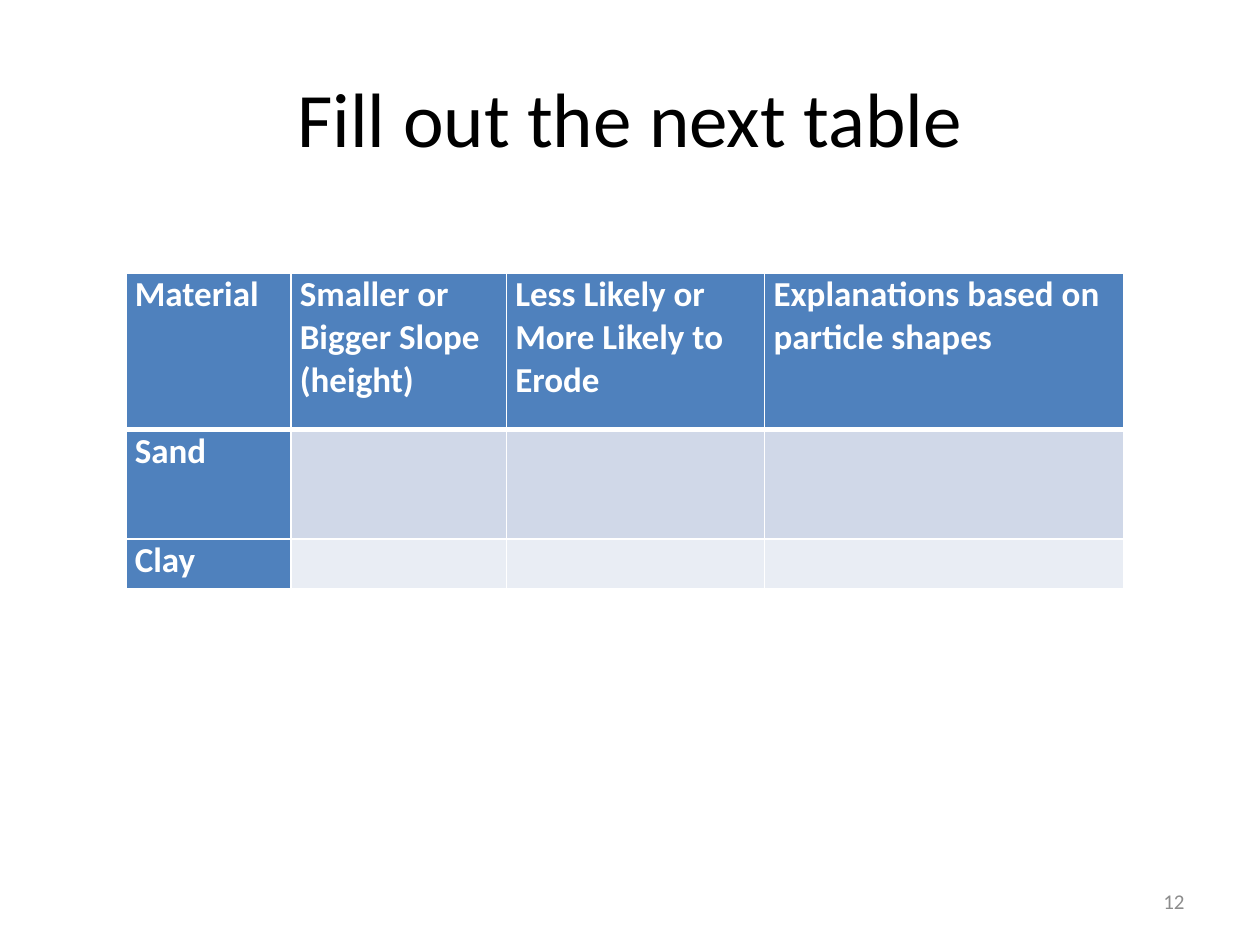
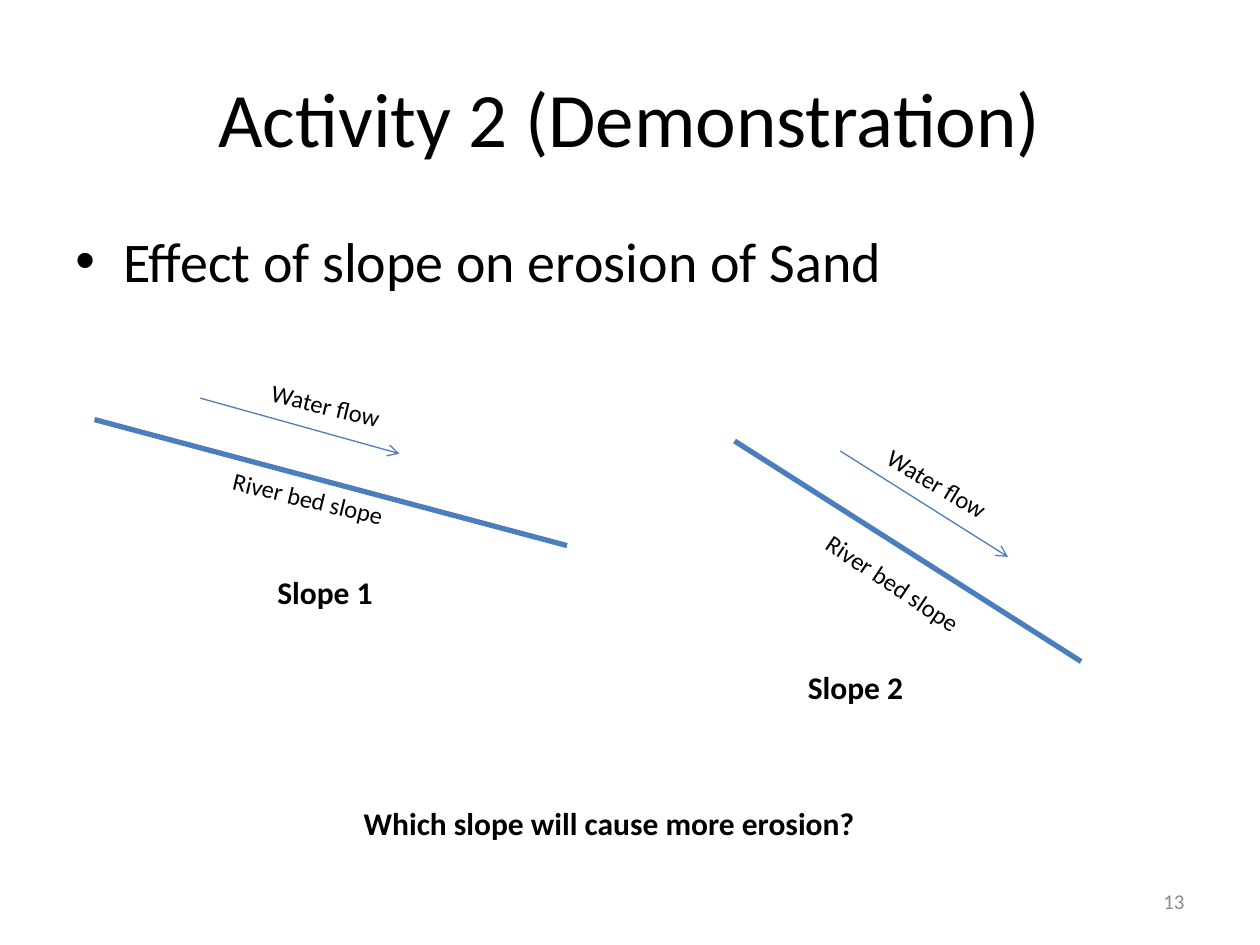
from typing import NamedTuple

from lxml import etree
from pptx import Presentation
from pptx.dml.color import RGBColor
from pptx.enum.shapes import MSO_CONNECTOR
from pptx.enum.text import MSO_ANCHOR, PP_ALIGN
from pptx.oxml.ns import qn
from pptx.util import Inches, Pt

STRAIGHT = MSO_CONNECTOR.STRAIGHT
TOP, MIDDLE = MSO_ANCHOR.TOP, MSO_ANCHOR.MIDDLE
LEFT, CENTER, RIGHT = PP_ALIGN.LEFT, PP_ALIGN.CENTER, PP_ALIGN.RIGHT

FONT = "Calibri"
BLACK, WHITE, GREY = "000000", "FFFFFF", "8C8C8C"
HEADER_BLUE, LINE_BLUE = "4F81BD", "4B7EBC"
BAND_FILLS = ("D0D8E8", "E9EDF4")
TITLE_ONLY = 5

COLUMN_WIDTHS = (1.31, 1.71, 2.05, 2.85)
ROW_HEIGHTS = (1.24, 0.87, 0.39)
HEADINGS = ("Material", "Smaller or Bigger Slope (height)",
            "Less Likely or More Likely to Erode",
            "Explanations based on particle shapes")
MATERIALS = ("Sand", "Clay")


class Frame(NamedTuple):
    left: float
    top: float
    width: float
    height: float


class Style(NamedTuple):
    size: float
    color: str = BLACK
    bold: bool = False
    align: PP_ALIGN = CENTER
    anchor: MSO_ANCHOR = TOP


class Line(NamedTuple):
    start: tuple[float, float]
    end: tuple[float, float]


class Label(NamedTuple):
    left: float
    top: float
    rotation: float


class Slope(NamedTuple):
    name: str
    bed: Line
    flow: Line
    flow_label: Label
    bed_label: Label
    caption: tuple[float, float]


TITLE_STYLE = Style(44, anchor=MIDDLE)
BULLET_STYLE = Style(32, align=LEFT)
LABEL_STYLE = Style(14)
CAPTION_STYLE = Style(18, bold=True)
CELL_STYLE = Style(20, WHITE, True, LEFT)
NUMBER_STYLE = Style(12, GREY, align=RIGHT, anchor=MIDDLE)

SLOPES = (
    Slope("Slope 1", Line((0.75, 3.33), (4.5, 4.33)), Line((1.59, 3.16), (3.17, 3.6)),
          Label(1.75, 3.05, 13.6), Label(1.61, 3.79, 13.6), (1.33, 4.5)),
    Slope("Slope 2", Line((5.83, 3.5), (8.58, 5.25)), Line((6.67, 3.58), (8, 4.42)),
          Label(6.6, 3.67, 30.9), Label(6.25, 4.46, 33.8), (5.54, 5.25)),
)


def rgb(color: str) -> RGBColor:
    return RGBColor.from_string(color)


def set_format(target, **values) -> None:
    for name, value in values.items():
        setattr(target, name, value)


def write(text_frame, text: str, style: Style) -> None:
    set_format(text_frame, word_wrap=True, vertical_anchor=style.anchor)
    para = text_frame.paragraphs[0]
    para.alignment = style.align
    span = para.add_run()
    span.text = text
    set_format(span.font, name=FONT, size=Pt(style.size), bold=style.bold)
    span.font.color.rgb = rgb(style.color)


def add_text(slide, frame: Frame, text: str, style: Style, rotation: float = 0):
    box = slide.shapes.add_textbox(*map(Inches, frame))
    box.rotation = rotation
    write(box.text_frame, text, style)
    return box


def add_page(deck, title: str, number: int):
    """Add a slide with the shared title and page number."""
    page = deck.slides.add_slide(deck.slide_layouts[TITLE_ONLY])
    heading = page.shapes.title
    set_format(heading, left=Inches(0.5), top=Inches(0.3),
               width=Inches(9), height=Inches(1.25))
    write(heading.text_frame, title, TITLE_STYLE)
    add_text(page, Frame(7.17, 6.95, 2.33, 0.4), str(number), NUMBER_STYLE)
    return page


def add_line(slide, line: Line, width: float, arrow: bool = False) -> None:
    connector = slide.shapes.add_connector(STRAIGHT, *map(Inches, line.start + line.end))
    connector.line.width = Pt(width)
    connector.line.color.rgb = rgb(LINE_BLUE)
    if arrow:
        etree.SubElement(connector.line._get_or_add_ln(), qn("a:tailEnd"), type="arrow")
    etree.SubElement(connector._element.spPr, qn("a:effectLst"))


def add_bullet(para, indent: float) -> None:
    properties = para._p.get_or_add_pPr()
    properties.set("marL", str(Inches(indent)))
    properties.set("indent", str(-Inches(indent)))
    etree.SubElement(properties, qn("a:buFont"), typeface="Arial")
    etree.SubElement(properties, qn("a:buChar"), char="•")


def add_borders(cell, widths: dict[str, float]) -> None:
    properties = cell._tc.get_or_add_tcPr()
    for side, width in widths.items():
        border = etree.SubElement(properties, qn(f"a:ln{side}"), w=str(Pt(width)))
        fill = etree.SubElement(border, qn("a:solidFill"))
        etree.SubElement(fill, qn("a:srgbClr"), val=WHITE)


def add_material_table(slide) -> None:
    frame = Frame(1, 2.17, sum(COLUMN_WIDTHS), sum(ROW_HEIGHTS))
    table = slide.shapes.add_table(len(ROW_HEIGHTS), len(COLUMN_WIDTHS),
                                   *map(Inches, frame)).table
    for column, width in zip(table.columns, COLUMN_WIDTHS):
        column.width = Inches(width)
    for row, height in zip(table.rows, ROW_HEIGHTS):
        row.height = Inches(height)

    blanks = ("",) * (len(HEADINGS) - 1)
    rows = [HEADINGS] + [(material, *blanks) for material in MATERIALS]
    for row_index, texts in enumerate(rows):
        top = 3 if row_index == 1 else 1
        bottom = 3 if row_index == 0 else 1
        for column_index, text in enumerate(texts):
            cell = table.cell(row_index, column_index)
            set_format(cell, margin_left=Inches(0.07), margin_right=Inches(0.07),
                       margin_top=0, margin_bottom=0)
            add_borders(cell, {"L": 1, "R": 1, "T": top, "B": bottom})
            cell.fill.solid()
            cell.fill.fore_color.rgb = rgb(HEADER_BLUE if text else BAND_FILLS[row_index - 1])
            if text:
                write(cell.text_frame, text, CELL_STYLE)


def add_slope(slide, slope: Slope) -> None:
    add_line(slide, slope.bed, 3)
    add_line(slide, slope.flow, 0.75, arrow=True)
    for text, label in (("Water flow", slope.flow_label),
                        ("River bed slope", slope.bed_label)):
        frame = Frame(label.left, label.top, 1.67, 0.34)
        add_text(slide, frame, text, LABEL_STYLE, label.rotation)
    add_text(slide, Frame(*slope.caption, 2.5, 0.4), slope.name, CAPTION_STYLE)


def main() -> None:
    deck = Presentation()
    set_format(deck, slide_width=Inches(10), slide_height=Inches(7.5))

    table_page = add_page(deck, "Fill out the next table", 12)
    add_material_table(table_page)

    slope_page = add_page(deck, "Activity 2 (Demonstration)", 13)
    body = add_text(slope_page, Frame(0.5, 1.75, 9, 4.95),
                    "Effect of slope on erosion of Sand", BULLET_STYLE)
    add_bullet(body.text_frame.paragraphs[0], 0.38)
    for slope in SLOPES:
        add_slope(slope_page, slope)
    add_text(slope_page, Frame(1.42, 6.33, 6.83, 0.4),
             "Which slope will cause more erosion?", CAPTION_STYLE)

    deck.save("out.pptx")


if __name__ == "__main__":
    main()
